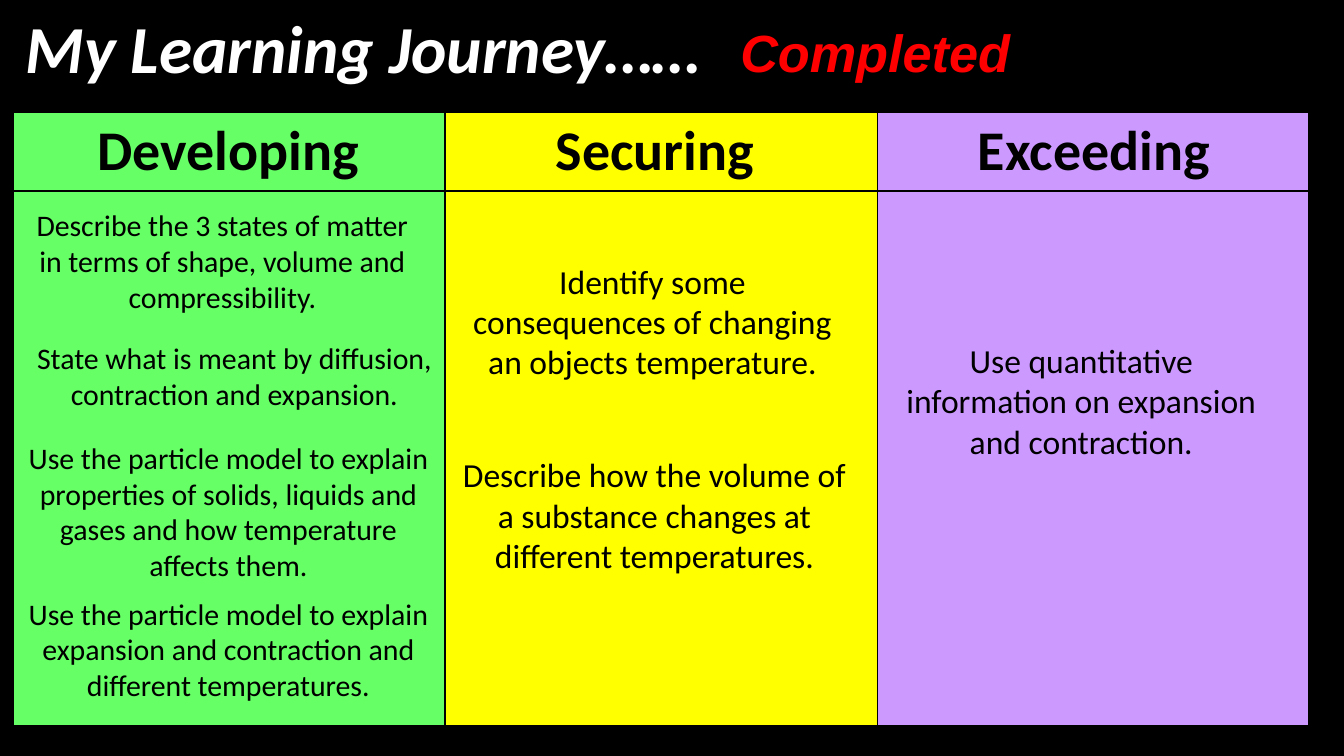
from lxml.etree import SubElement
from pptx import Presentation
from pptx.dml.color import RGBColor
from pptx.enum.text import MSO_ANCHOR, PP_ALIGN
from pptx.oxml.ns import qn
from pptx.util import Inches, Pt

COLORS = {
    "black": "000000", "white": "FFFFFF", "red": "FF0000",
    "green": "66FF66", "yellow": "FFFF00", "purple": "CC99FF",
}
LEVELS = [("Developing", "green"), ("Securing ", "yellow"), ("Exceeding", "purple")]

# Statements per level: text, left, top, width, height
DEVELOPING = [
    ("Describe the 3 states of matter in terms of shape, volume and compressibility.",
     0.09, 1.49, 3.13, 0.91),
    ("State what is meant by diffusion, contraction and expansion.",
     0.16, 2.48, 3.17, 0.64),
    ("Use the particle model to explain properties of solids, liquids and gases "
     "and how temperature affects them.", 0.09, 3.22, 3.22, 1.18),
    ("Use the particle model to explain expansion and contraction and different "
     "temperatures.", 0.09, 4.38, 3.22, 0.91),
]
SECURING = [
    ("Identify some consequences of changing an objects temperature.",
     3.36, 1.89, 2.99, 1.01),
    ("Describe how the volume of a substance changes at different temperatures.",
     3.26, 3.33, 3.22, 1.01),
]
EXCEEDING = [
    ("Use quantitative information on expansion and contraction.",
     6.55, 2.48, 2.99, 1.01),
]


def rgb(name):
    return RGBColor.from_string(COLORS[name])


def write(frame, text, size=16, font="Calibri", color="black",
          bold=False, italic=False, align=PP_ALIGN.CENTER):
    paragraph = frame.paragraphs[0]
    paragraph.alignment = align
    run = paragraph.add_run()
    run.text = text
    run.font.size = Pt(size)
    run.font.name = font
    run.font.bold = bold
    run.font.italic = italic
    run.font.color.rgb = rgb(color)


class JourneySlide:
    def __init__(self, deck, background="black", border="black"):
        self.slide = deck.slides.add_slide(deck.slide_layouts[6])
        self.border = border
        fill = self.slide.background.fill
        fill.solid()
        fill.fore_color.rgb = rgb(background)

    def text(self, text, left, top, width, height, **style):
        box = self.slide.shapes.add_textbox(
            Inches(left), Inches(top), Inches(width), Inches(height))
        box.text_frame.word_wrap = True
        write(box.text_frame, text, **style)

    def cell_borders(self, cell, widths):
        properties = cell._tc.get_or_add_tcPr()
        for index, (side, width) in enumerate(widths.items()):
            line = SubElement(properties, qn(f"a:ln{side}"), w=str(Pt(width)))
            solid = SubElement(line, qn("a:solidFill"))
            SubElement(solid, qn("a:srgbClr"), val=COLORS[self.border])
            properties.remove(line)
            properties.insert(index, line)  # borders come before the fill

    def level_table(self, levels, left, top, column_width, row_heights):
        last_column, last_row = len(levels) - 1, len(row_heights) - 1
        table = self.slide.shapes.add_table(
            len(row_heights), len(levels), Inches(left), Inches(top),
            Inches(column_width * len(levels)), Inches(sum(row_heights))).table
        for row, height in enumerate(row_heights):
            table.rows[row].height = Inches(height)
            for column, (level, color) in enumerate(levels):
                table.columns[column].width = Inches(column_width)
                cell = table.cell(row, column)
                cell.fill.solid()
                cell.fill.fore_color.rgb = rgb(color)
                # Thick outer frame, thin inner lines
                outer = {"L": column == 0, "R": column == last_column,
                         "T": row == 0, "B": row == last_row}
                self.cell_borders(
                    cell, {side: 2.25 if edge else 1 for side, edge in outer.items()})
                if row == 0:
                    cell.vertical_anchor = MSO_ANCHOR.MIDDLE
                    cell.margin_left = cell.margin_right = Inches(0.07)
                    cell.margin_top = cell.margin_bottom = Inches(0.04)
                    write(cell.text_frame, level, size=30, bold=True)


def main():
    # Widescreen page, 16 to 9
    deck = Presentation()
    deck.slide_width = Inches(10)
    deck.slide_height = deck.slide_width * 9 // 16
    journey = JourneySlide(deck)

    # Heading
    journey.text("My Learning Journey……", 0.09, 0, 7.18, 1.41, size=36,
                 color="white", bold=True, italic=True, align=PP_ALIGN.LEFT)

    # Level columns
    journey.level_table(LEVELS, 0.09, 0.83, 3.22, [0.59, 3.99])

    # Status
    journey.text("Completed", 5.41, 0.1, 2.73, 0.57, size=28, font="Arial",
                 color="red", bold=True, italic=True, align=PP_ALIGN.LEFT)

    # Statements
    for statement in DEVELOPING:
        journey.text(*statement, size=16)
    for statement in SECURING + EXCEEDING:
        journey.text(*statement, size=18)

    deck.save("out.pptx")


if __name__ == "__main__":
    main()
